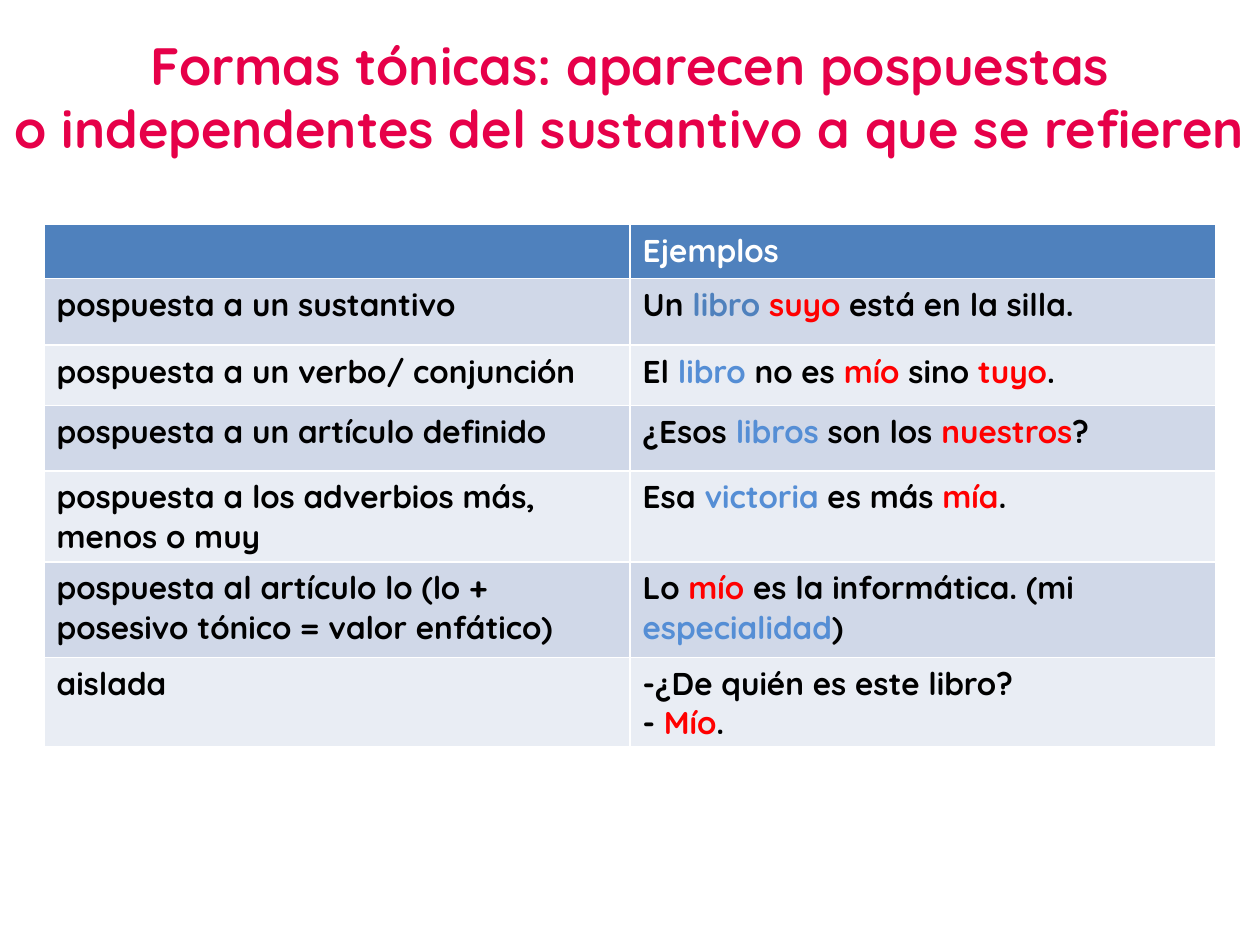
from pptx import Presentation
from pptx.dml.color import RGBColor
from pptx.enum.text import PP_ALIGN as Align
from pptx.util import Inches, Pt

FONT = "Quicksand"
PINK, WHITE, BLACK, RED = "E60049", "FFFFFF", "000000", "FF0000"
HEADER_BLUE, LIGHT_BLUE = "4F81BD", "558ED5"
BANDS = ("D0D8E8", "E9EDF4")

TITLE = [
    [("Formas tónicas: aparecen pospuestas", PINK)],
    [("o independentes del sustantivo a que se refieren", PINK)],
]

# Each row: height, form, and example paragraphs made of (text, colour) spans.
ROWS = [
    (0.53, "pospuesta a un sustantivo",
     [[("Un ", BLACK), ("libro ", HEADER_BLUE), ("suyo", RED),
       (" está en la silla.", BLACK)]]),
    (0.48, "pospuesta a un verbo/ conjunción",
     [[("El ", BLACK), ("libro", LIGHT_BLUE), (" no es ", BLACK), ("mío ", RED),
       ("sino ", BLACK), ("tuyo", RED), (".", BLACK)]]),
    (0.52, "pospuesta a un artículo definido",
     [[("¿Esos ", BLACK), ("libros ", LIGHT_BLUE), ("son los ", BLACK),
       ("nuestros", RED), ("?", BLACK)]]),
    (0.72, "pospuesta a los adverbios más, menos o muy",
     [[("Esa ", BLACK), ("victoria ", LIGHT_BLUE), ("es más ", BLACK),
       ("mía", RED), (".", BLACK)]]),
    (0.76, "pospuesta al artículo lo (lo + posesivo tónico = valor enfático)",
     [[("Lo ", BLACK), ("mío ", RED), ("es la informática. (mi ", BLACK),
       ("especialidad", LIGHT_BLUE), (")", BLACK)]]),
    (0.71, "aislada",
     [[("-¿De quién es este libro?", BLACK)],
      [("- ", BLACK), ("Mío", RED), (".", BLACK)]]),
]


def color(value):
    return RGBColor.from_string(value)


def write(frame, paragraphs, size=18, align=None):
    frame.word_wrap = True
    for index, spans in enumerate(paragraphs):
        para = frame.add_paragraph() if index else frame.paragraphs[0]
        para.alignment = align
        for text, shade in spans:
            span = para.add_run()
            span.text = text
            font = span.font
            font.name, font.size, font.bold = FONT, Pt(size), True
            font.color.rgb = color(shade)


def add_title(page, left, top, width, height):
    box = page.shapes.add_textbox(
        Inches(left), Inches(top), Inches(width), Inches(height))
    write(box.text_frame, TITLE, size=30, align=Align.CENTER)


def fill_cell(cell, fill, paragraphs=()):
    cell.fill.solid()
    cell.fill.fore_color.rgb = color(fill)
    write(cell.text_frame, paragraphs)


def add_examples_table(page, left, top, width, header_height):
    height = header_height + sum(row[0] for row in ROWS)
    table = page.shapes.add_table(
        len(ROWS) + 1, 2, Inches(left), Inches(top),
        Inches(width), Inches(height)).table
    table.rows[0].height = Inches(header_height)
    fill_cell(table.cell(0, 0), HEADER_BLUE)
    fill_cell(table.cell(0, 1), HEADER_BLUE, [[("Ejemplos", WHITE)]])
    for index, (row_height, form, example) in enumerate(ROWS):
        table.rows[index + 1].height = Inches(row_height)
        band = BANDS[index % 2]
        fill_cell(table.cell(index + 1, 0), band, [[(form, BLACK)]])
        fill_cell(table.cell(index + 1, 1), band, example)


def main():
    deck = Presentation()
    deck.slide_width, deck.slide_height = Inches(10), Inches(7.5)
    page = deck.slides.add_slide(deck.slide_layouts[6])
    add_title(page, 0, 0.21, 10, 1.11)
    add_examples_table(page, 0.35, 1.78, 9.3, 0.43)
    deck.save("out.pptx")


if __name__ == "__main__":
    main()
